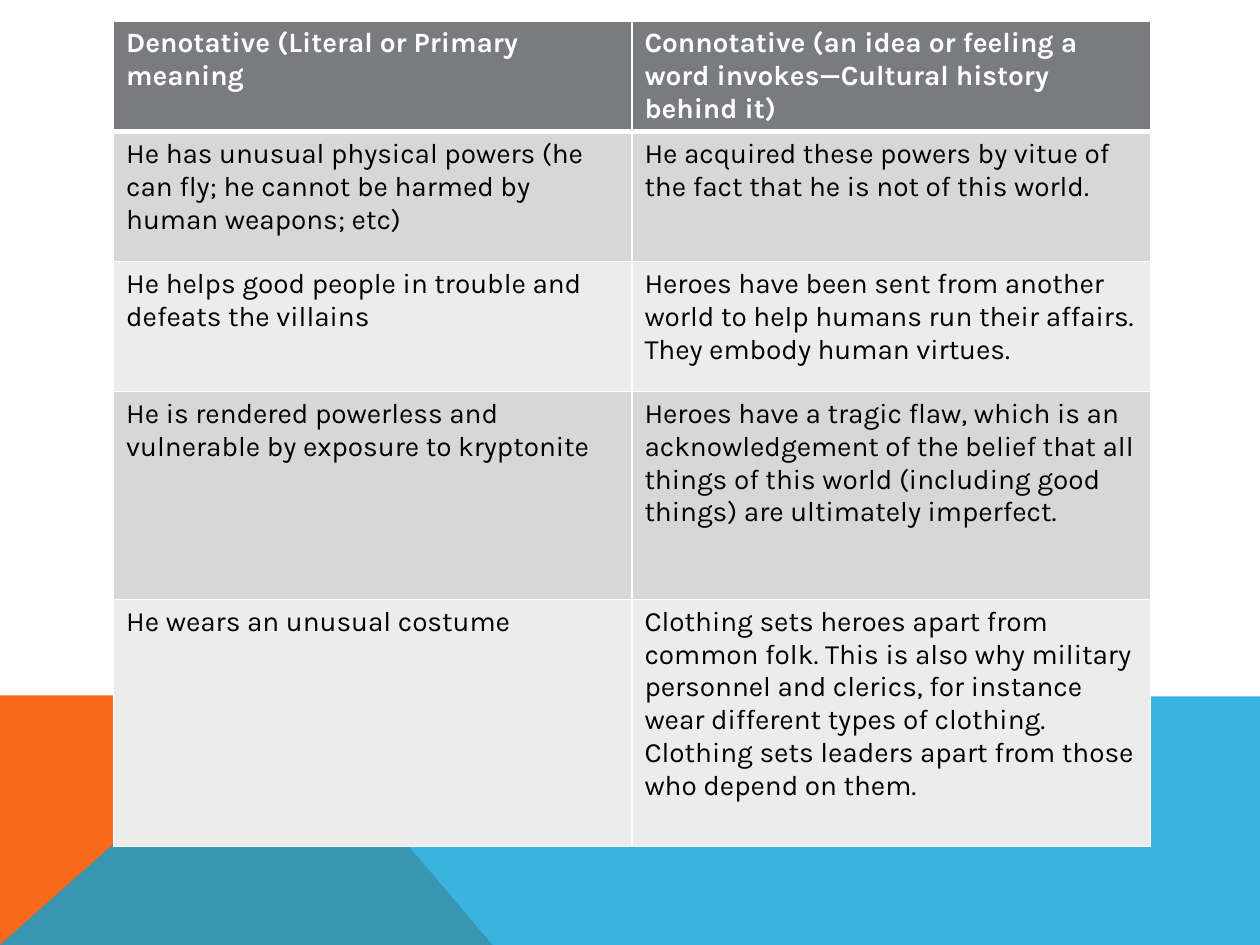
from lxml import etree
from pptx import Presentation
from pptx.dml.color import RGBColor
from pptx.oxml.ns import qn
from pptx.util import Cm, Pt

BLANK_LAYOUT = 6
WIDTH, HEIGHT = 25.4, 19.05
COLOURS = {
    "orange": "F96A1B",
    "blue": "08A1D9",
    "header": "797B7E",
    "dark band": "D7D7D8",
    "light band": "ECECEC",
    "white": "FFFFFF",
    "black": "000000",
}
ROWS = [
    ("Denotative (Literal or Primary meaning",
     "Connotative (an idea or feeling a word invokes—Cultural history behind it)"),
    ("He has unusual physical powers (he can fly; he cannot be harmed by human weapons; etc)",
     "He acquired these powers by vitue of the fact that he is not of this world."),
    ("He helps good people in trouble and defeats the villains",
     "Heroes have been sent from another world to help humans run their affairs. "
     "They embody human virtues."),
    ("He is rendered powerless and vulnerable by exposure to kryptonite",
     "Heroes have a tragic flaw, which is an acknowledgement of the belief that all "
     "things of this world (including good things) are ultimately imperfect."),
    ("He wears an unusual costume",
     "Clothing sets heroes apart from common folk. This is also why military personnel "
     "and clerics, for instance wear different types of clothing. Clothing sets leaders "
     "apart from those who depend on them."),
]
ROW_HEIGHTS = [1.88, 2.62, 2.62, 4.19, 4.98]


class SlideStyle:
    font = "Karla"
    size = Pt(16)

    def __init__(self, slide):
        self.slide = slide

    def colour(self, name):
        return RGBColor.from_string(COLOURS[name])

    def polygon(self, points, fill, opacity=100):
        corners = [(Cm(x), Cm(y)) for x, y in points]
        builder = self.slide.shapes.build_freeform(*corners[0])
        builder.add_line_segments(corners[1:], close=True)
        shape = builder.convert_to_shape()
        shape.shadow.inherit = False
        shape.line.fill.background()
        shape.fill.solid()
        shape.fill.fore_color.rgb = self.colour(fill)
        if opacity < 100:
            tone = shape.fill._xPr.find(qn("a:solidFill"))[0]
            etree.SubElement(tone, qn("a:alpha"), val=str(opacity * 1000))

    def borders(self, cell, widths):
        properties = cell._tc.get_or_add_tcPr()
        for index, (side, points) in enumerate(widths.items()):
            line = etree.Element(qn(f"a:ln{side}"), w=str(Pt(points)))
            fill = etree.SubElement(line, qn("a:solidFill"))
            etree.SubElement(fill, qn("a:srgbClr"), val=COLOURS["white"])
            properties.insert(index, line)

    def cell(self, cell, text, fill, ink, bold, widths):
        cell.fill.solid()
        cell.fill.fore_color.rgb = self.colour(fill)
        self.borders(cell, widths)
        span = cell.text_frame.paragraphs[0].add_run()
        span.text = text
        span.font.name, span.font.size, span.font.bold = self.font, self.size, bold
        span.font.color.rgb = self.colour(ink)

    def table(self, left, top, width, heights, rows):
        columns = len(rows[0])
        table = self.slide.shapes.add_table(
            len(rows), columns, Cm(left), Cm(top), Cm(width), Cm(sum(heights))).table
        for column in table.columns:
            column.width = Cm(width / columns)
        for index, (height, texts) in enumerate(zip(heights, rows)):
            table.rows[index].height = Cm(height)
            header = index == 0
            band = "dark band" if index % 2 else "light band"
            widths = {"L": 1, "R": 1, "T": 3 if index == 1 else 1, "B": 3 if header else 1}
            for position, text in enumerate(texts):
                self.cell(table.cell(index, position), text,
                          "header" if header else band,
                          "white" if header else "black", header, widths)


def main():
    deck = Presentation()
    deck.slide_width, deck.slide_height = Cm(WIDTH), Cm(HEIGHT)
    page = SlideStyle(deck.slides.add_slide(deck.slide_layouts[BLANK_LAYOUT]))

    # Coloured footer: orange wedge under a translucent blue band
    page.polygon([(0, HEIGHT), (0, 14.02), (5.66, 14.02), (9.93, HEIGHT)], "orange")
    page.polygon([(0, HEIGHT), (5.66, 14.02), (WIDTH, 14.04), (WIDTH, HEIGHT)],
                 "blue", opacity=80)

    # Comparison of meanings
    page.table(2.29, 0.42, 20.9, ROW_HEIGHTS, ROWS)

    deck.save("out.pptx")


if __name__ == "__main__":
    main()
